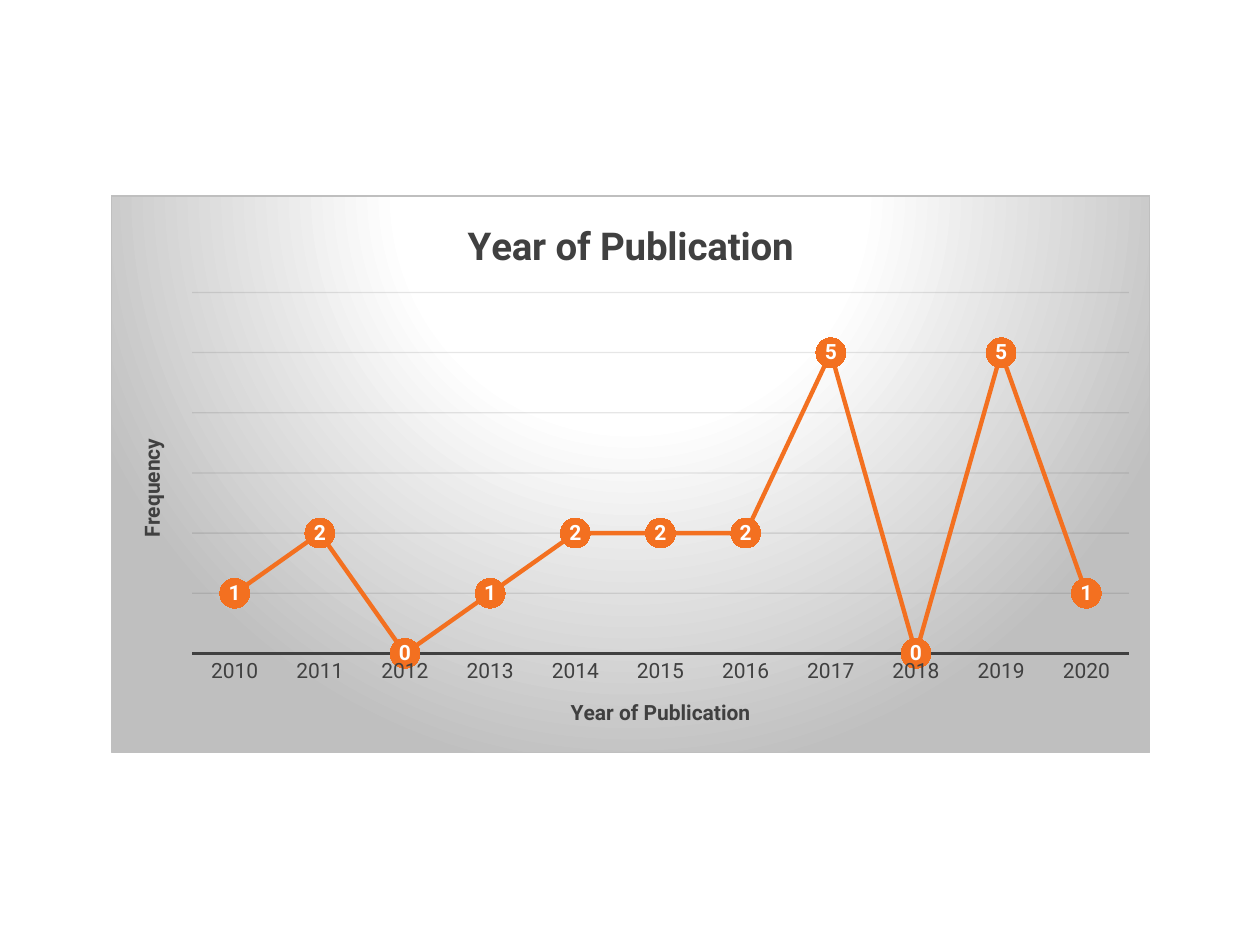
from lxml.etree import SubElement
from pptx import Presentation
from pptx.chart.data import CategoryChartData
from pptx.dml.color import RGBColor
from pptx.enum.chart import XL_CHART_TYPE as ChartType
from pptx.enum.chart import XL_LABEL_POSITION as LabelPosition
from pptx.enum.chart import XL_MARKER_STYLE as MarkerStyle
from pptx.enum.chart import XL_TICK_MARK as TickMark
from pptx.oxml import parse_xml
from pptx.oxml.ns import nsdecls, qn
from pptx.util import Inches, Pt

ORANGE = RGBColor(0xF3, 0x70, 0x20)
DARK_GRAY = RGBColor(0x40, 0x40, 0x40)
GRID = RGBColor(0x0D, 0x0D, 0x0D)
SILVER = RGBColor(0xBF, 0xBF, 0xBF)
WHITE = RGBColor(0xFF, 0xFF, 0xFF)
FONT = "Roboto"
YEARS = [str(year) for year in range(2010, 2021)]
FREQUENCIES = [1, 2, 0, 1, 2, 2, 2, 5, 0, 5, 1]


def style_font(font, size, color, bold=False):
    """Apply the chart typeface with a size, colour and weight."""
    font.name = FONT
    font.size = Pt(size)
    font.bold = bold
    font.color.rgb = color


def set_title(owner, text, size):
    """Give a chart or an axis a bold title."""
    text_frame = (owner.chart_title if hasattr(owner, "chart_title") else owner.axis_title).text_frame
    text_frame.text = text
    style_font(text_frame.paragraphs[0].runs[0].font, size, DARK_GRAY, True)


def style_background(chart):
    """Fill the chart area with a radial gradient and a thin border."""
    stops = "".join(
        f'<a:gs pos="{position * 1000}"><a:srgbClr val="{color}"/></a:gs>'
        for position, color in ((0, WHITE), (39, WHITE), (100, SILVER))
    )
    properties = parse_xml(
        f'<c:spPr {nsdecls("c", "a")}><a:gradFill><a:gsLst>{stops}</a:gsLst>'
        '<a:path path="circle"><a:fillToRect l="50000" t="-80000" r="50000" b="180000"/></a:path>'
        f'</a:gradFill><a:ln w="{Pt(0.75)}"><a:solidFill><a:srgbClr val="{SILVER}"/>'
        "</a:solidFill></a:ln></c:spPr>"
    )
    chart.element.find(qn("c:chart")).addnext(properties)


def style_axes(chart):
    """Format the year axis and the hidden frequency axis with its grid."""
    year_axis, frequency_axis = chart.category_axis, chart.value_axis
    set_title(year_axis, "Year of Publication", 12)
    set_title(frequency_axis, "Frequency", 12)
    year_axis.major_tick_mark = TickMark.NONE
    year_axis.format.line.color.rgb = DARK_GRAY
    year_axis.format.line.width = Pt(1.5)
    style_font(year_axis.tick_labels.font, 12, DARK_GRAY)
    frequency_axis.visible = False
    frequency_axis.minimum_scale = 0
    frequency_axis.maximum_scale = 6
    frequency_axis.major_unit = 1
    grid_line = frequency_axis.major_gridlines.format.line
    grid_line.color.rgb = GRID
    grid_line.width = Pt(0.75)
    grid_color = grid_line.fill._xPr.find(".//" + qn("a:srgbClr"))
    SubElement(grid_color, qn("a:alpha"), val="10000")


def style_series(series):
    """Format the line, its round markers and the centred values."""
    series.smooth = False
    series.format.line.color.rgb = ORANGE
    series.format.line.width = Pt(2.5)
    marker = series.marker
    marker.style = MarkerStyle.CIRCLE
    marker.size = 17
    marker.format.fill.solid()
    marker.format.fill.fore_color.rgb = ORANGE
    marker.format.line.fill.background()
    labels = series.data_labels
    labels.show_value = True
    labels.position = LabelPosition.CENTER
    style_font(labels.font, 12, WHITE, True)


def add_publication_chart(slide):
    """Add the line chart of publications by year."""
    chart_data = CategoryChartData()
    chart_data.categories = YEARS
    chart_data.add_series("Series 1", FREQUENCIES)
    chart = slide.shapes.add_chart(
        ChartType.LINE_MARKERS, Inches(0.88), Inches(1.55), Inches(8.25), Inches(4.43), chart_data
    ).chart
    chart.has_legend = False
    chart.font.name = FONT
    chart.font.size = Pt(10)
    chart.plots[0].vary_by_categories = False
    set_title(chart, "Year of Publication", 22)
    style_background(chart)
    style_axes(chart)
    style_series(chart.plots[0].series[0])


def main():
    """Build and save the presentation."""
    presentation = Presentation()
    presentation.slide_width = Inches(10)
    presentation.slide_height = Inches(7.5)
    slide = presentation.slides.add_slide(presentation.slide_layouts[6])
    add_publication_chart(slide)
    presentation.save("out.pptx")


if __name__ == "__main__":
    main()
